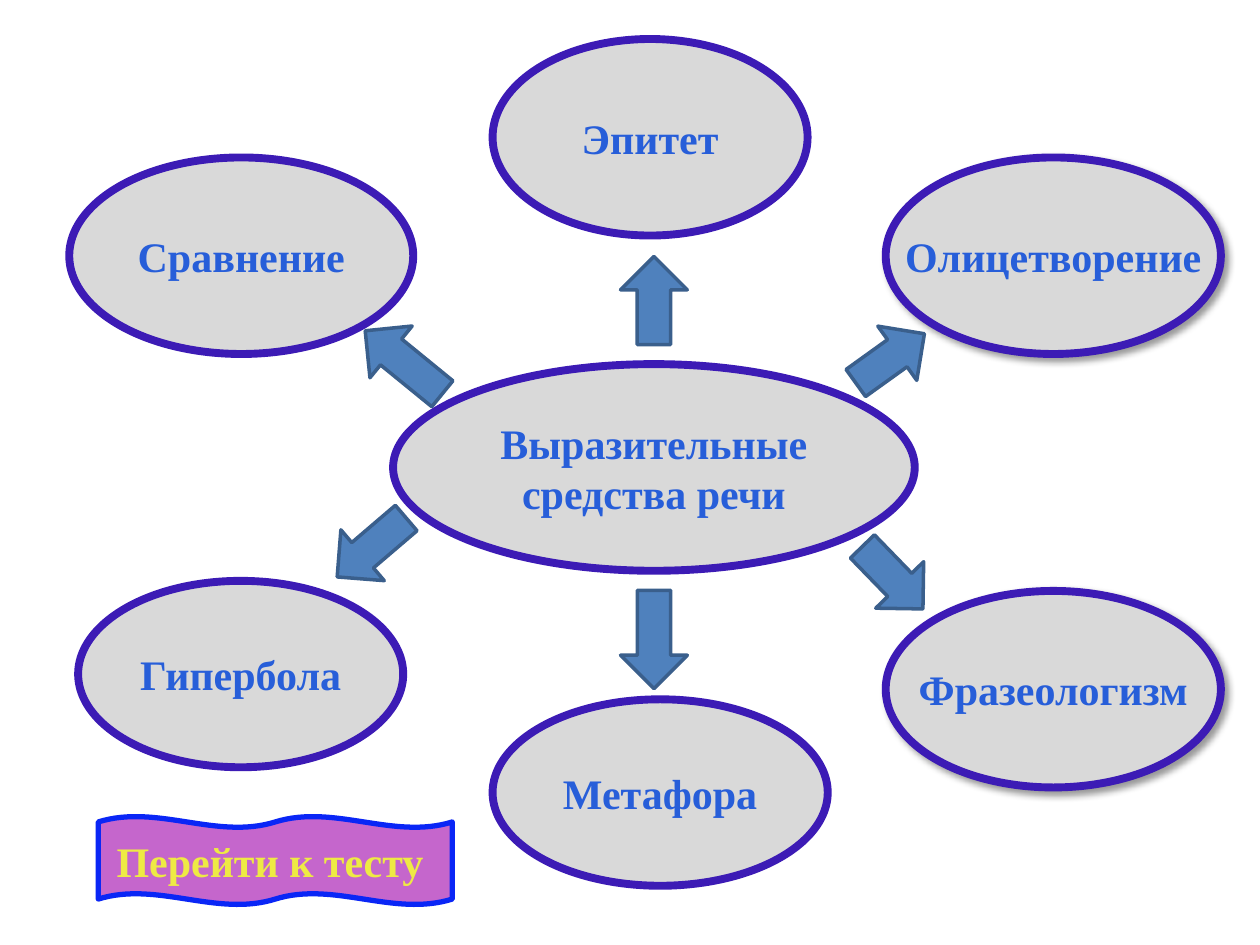
"""Build a slide with a radial diagram of expressive means of speech."""
from dataclasses import dataclass

from lxml.etree import SubElement
from pptx import Presentation
from pptx.dml.color import RGBColor as Color
from pptx.enum.shapes import MSO_SHAPE as Shape
from pptx.enum.text import MSO_ANCHOR as Anchor, PP_ALIGN as Align
from pptx.oxml.ns import qn
from pptx.util import Inches, Pt


@dataclass(frozen=True)
class Theme:
    font: str = "Times New Roman"
    text_size: int = 24
    ellipse: tuple = ("D9D9D9", "3C1BB5", 4.5)
    arrow: tuple = ("4F81BD", "3A5F8C", 2)
    button: tuple = ("C566CC", "0A26F6", 3)
    label: str = "275ED9"
    button_label: str = "EEEA44"
    shadow: str = "000000"


theme = Theme()
deck = Presentation()
deck.slide_width, deck.slide_height = Inches(10), Inches(7.5)
column, row = deck.slide_width / 100, deck.slide_height / 75
page = deck.slides.add_slide(deck.slide_layouts[6])


def add_figure(preset, left, top, width, height, style):
    fill, line, weight = style
    figure = page.shapes.add_shape(
        preset, round(left * column), round(top * row), round(width * column), round(height * row))
    figure.shadow.inherit = False
    figure.fill.solid()
    figure.fill.fore_color.rgb = Color.from_string(fill)
    figure.line.color.rgb = Color.from_string(line)
    figure.line.width = Pt(weight)
    return figure


def write_label(figure, text, color, wrap=True):
    frame = figure.text_frame
    frame.word_wrap = wrap
    frame.vertical_anchor = Anchor.MIDDLE
    para = frame.paragraphs[0]
    para.text = text
    para.alignment = Align.CENTER
    para.font.name = theme.font
    para.font.size = Pt(theme.text_size)
    para.font.bold = True
    para.font.color.rgb = Color.from_string(color)


terms = [
    ("Выразительные средства речи", 31.2, 28.9, 41.4, 16.4),
    ("Эпитет", 39.1, 3.1, 25, 15.6),
    ("Метафора", 39.1, 55.5, 26.6, 14.8),
    ("Сравнение", 5.5, 12.5, 27.3, 15.6),
    ("Гипербола", 6.2, 46.1, 25.8, 14.8),
]
for text, *place in terms:
    write_label(add_figure(Shape.OVAL, *place, theme.ellipse), text, theme.label)

arrow_height = 5.3
arrows = [
    (51.9, 23.85, 7, 270),
    (70.65, 28.45, 6.7, 324.3),
    (32.05, 28.75, 7.9, 219.2),
    (29.5, 43.45, 7.2, 139.5),
    (51.9, 50.75, 7.8, 90),
    (70.85, 45.85, 6.9, 45.9),
]
for center_x, center_y, length, angle in arrows:
    arrow = add_figure(Shape.RIGHT_ARROW, center_x - length / 2, center_y - arrow_height / 2,
                       length, arrow_height, theme.arrow)
    arrow.rotation = angle

button = add_figure(Shape.DOUBLE_WAVE, 7.8, 64.8, 28.1, 7, theme.button)
write_label(button, "Перейти к тесту ", theme.button_label)

for text, top in (("Олицетворение", 12.5), ("Фразеологизм", 46.9)):
    term = add_figure(Shape.OVAL, 70.3, top, 26.6, 15.6, theme.ellipse)
    write_label(term, text, theme.label, wrap=False)
    effects = term._element.spPr.find(qn("a:effectLst"))
    shadow = SubElement(effects, qn("a:outerShdw"), blurRad=str(Pt(4)), dist=str(Pt(3)),
                        dir=str(45 * 60000), algn="tl", rotWithShape="0")
    tint = SubElement(shadow, qn("a:srgbClr"), val=theme.shadow)
    SubElement(tint, qn("a:alpha"), val="40000")

deck.save("out.pptx")
